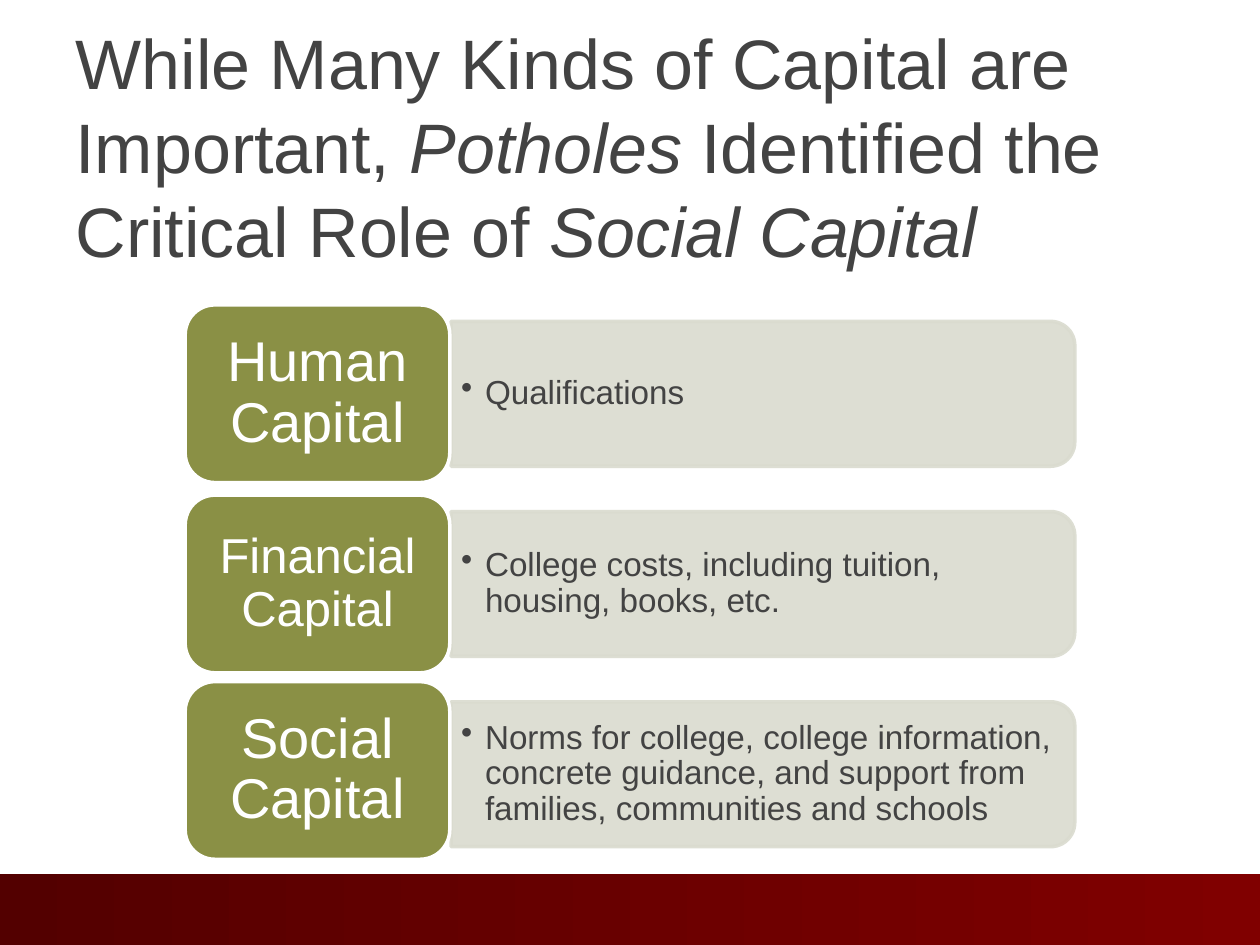
"""Build a slide that sets out three kinds of capital, each with its meaning."""
from lxml.etree import SubElement
from pptx import Presentation
from pptx.dml.color import RGBColor
from pptx.enum.shapes import MSO_SHAPE as SHAPE
from pptx.enum.text import MSO_ANCHOR as ANCHOR, PP_ALIGN as ALIGN
from pptx.oxml.ns import qn
from pptx.util import Inches, Pt

WHITE = RGBColor(0xFF, 0xFF, 0xFF)
GREY = RGBColor(0x43, 0x43, 0x43)
OLIVE = RGBColor(0x8A, 0x90, 0x45)
PALE = RGBColor(0xDA, 0xDB, 0xCF)
RED = RGBColor(0x80, 0x00, 0x00)
DARK_RED = RGBColor(0x53, 0x00, 0x00)


def write(tf, *texts, size, color=GREY, align=ALIGN.LEFT, spacing=0.9,
          anchor=ANCHOR.MIDDLE, margins=(0.08, 0.04), bullet=False):
    """Fill a text frame with runs; every second run is italic."""
    tf.word_wrap = True
    tf.vertical_anchor = anchor
    tf.margin_left = tf.margin_right = Inches(margins[0])
    tf.margin_top = tf.margin_bottom = Inches(margins[1])
    p = tf.paragraphs[0]
    p.alignment, p.line_spacing = align, spacing
    if bullet:
        p.level = 1
        pPr = p._p.get_or_add_pPr()
        pPr.set("marL", str(Inches(0.19)))
        pPr.set("indent", str(-Inches(0.19)))
        SubElement(pPr, qn("a:buChar"), char="•")
    for i, text in enumerate(texts):
        r = p.add_run()
        r.text = text
        r.font.name, r.font.size = "Arial", Pt(size)
        r.font.color.rgb = color
        r.font.italic = i % 2 == 1


def add_box(s, kind, x, y, w, h, fill, line):
    """Add a flat shape with a solid fill and a 2 pt outline."""
    sp = s.shapes.add_shape(kind, int(x), int(y), int(w), int(h))
    sp.shadow.inherit = False
    sp.fill.solid()
    sp.fill.fore_color.rgb = fill
    sp.line.color.rgb = line
    sp.line.width = Pt(2)
    return sp


prs = Presentation()
prs.slide_width, prs.slide_height = Inches(10), Inches(7.5)
COL, ROW = prs.slide_width / 100, prs.slide_height / 100
s = prs.slides.add_slide(prs.slide_layouts[5])

band = s.shapes.add_shape(SHAPE.RECTANGLE, 0, int(92.5 * ROW),
                          prs.slide_width, int(7.5 * ROW))
band.shadow.inherit = False
band.line.fill.background()
band.fill.gradient()
band.fill.gradient_angle = 180
for stop, color in zip(band.fill.gradient_stops, (RED, DARK_RED)):
    stop.color.rgb = color

title = s.shapes.title
title.left, title.top = int(5 * COL), int(ROW)
title.width, title.height = int(90 * COL), int(11.3 * ROW)
write(title.text_frame, "While Many Kinds of Capital are Important, ", "Potholes ",
      "Identified the Critical Role of ", "Social Capital",
      size=40, spacing=Pt(48), anchor=ANCHOR.TOP, margins=(0.1, 0.08))

KINDS = [
    ("Human Capital", 32, 0, "Qualifications"),
    ("Financial Capital", 28, 0, "College costs, including tuition, housing, books, etc."),
    ("Social Capital", 32, -0.4, "Norms for college, college information, concrete guidance, "
     "and support from families, communities and schools"),
]
LEFT, SPLIT = 14.7 * COL, 35.8 * COL
LENGTH, THICK = 49.5 * COL, 11.5 * COL
LABEL_W, LABEL_H = 21 * COL, 18.8 * ROW
TEXT_W, TEXT_H = 49 * COL, 13.9 * ROW

for i, (name, size, shift, meaning) in enumerate(KINDS):
    mid = (41.67 + 20.13 * i) * ROW
    bar = add_box(s, SHAPE.ROUND_2_SAME_RECTANGLE, SPLIT + (LENGTH - THICK) / 2,
                  mid - LENGTH / 2, THICK, LENGTH, PALE, PALE)
    bar.rotation = 90
    for clr in bar._element.spPr.iter(qn("a:srgbClr")):
        SubElement(clr, qn("a:alpha"), val="90000")
    box = s.shapes.add_textbox(int(SPLIT), int(mid - TEXT_H / 2), int(TEXT_W), int(TEXT_H))
    write(box.text_frame, meaning, size=19, bullet=True)
    label = add_box(s, SHAPE.ROUNDED_RECTANGLE, LEFT, mid + shift * ROW - LABEL_H / 2,
                    LABEL_W, LABEL_H, OLIVE, WHITE)
    write(label.text_frame, name, size=size, color=WHITE, align=ALIGN.CENTER,
          margins=(0.13, 0.07))

prs.save("out.pptx")
